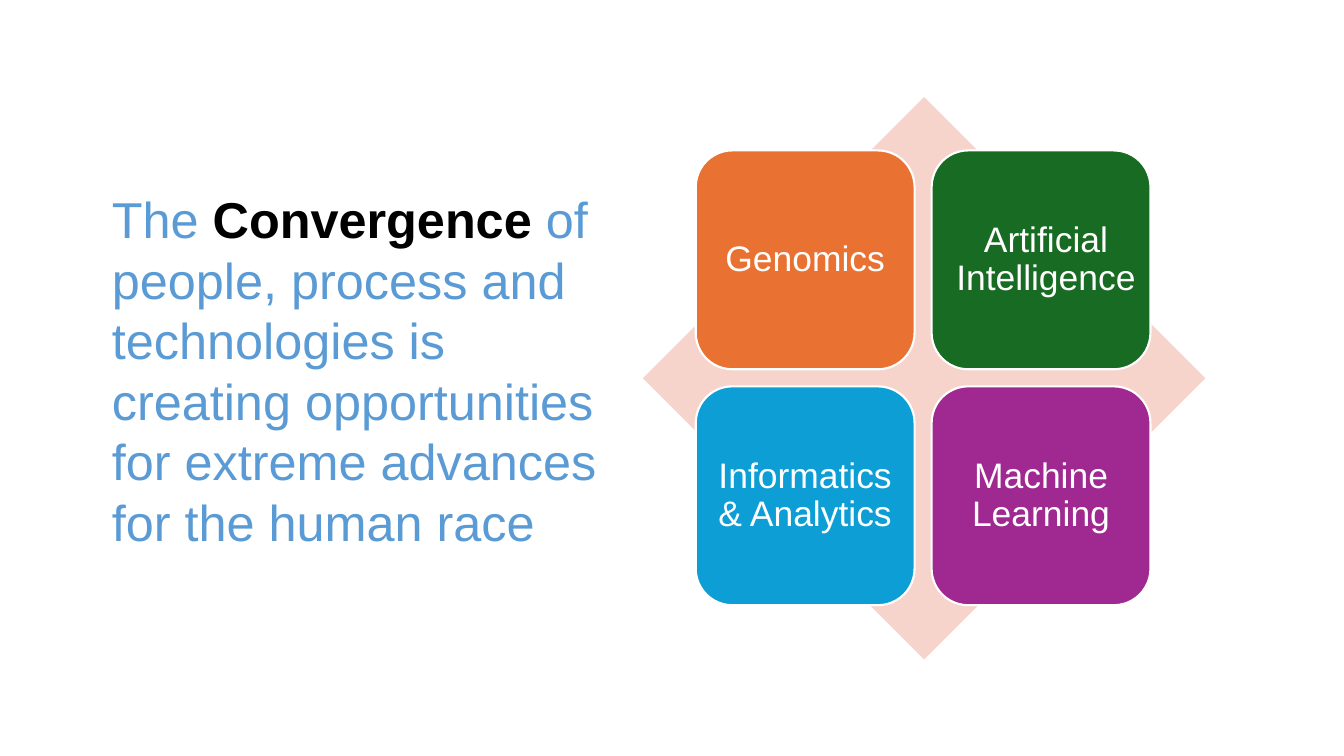
from pptx import Presentation
from pptx.dml.color import RGBColor
from pptx.enum.shapes import MSO_SHAPE
from pptx.enum.text import MSO_ANCHOR, MSO_AUTO_SIZE, PP_ALIGN
from pptx.util import Pt

DIAMOND, ROUNDED = MSO_SHAPE.DIAMOND, MSO_SHAPE.ROUNDED_RECTANGLE
MIDDLE, NO_FIT = MSO_ANCHOR.MIDDLE, MSO_AUTO_SIZE.NONE
LEFT, CENTER = PP_ALIGN.LEFT, PP_ALIGN.CENTER

TITLE = [
    ("The ", "5B9BD5", False),
    ("Convergence", "000000", True),
    (" of people, process and technologies is creating opportunities "
     "for extreme advances for the human race", "5B9BD5", False),
]
TILES = [
    ("Genomics", "E97131", 7.2),
    ("Artificial Intelligence", "176B22", 0),
    ("Informatics & Analytics", "0C9ED5", 7.2),
    ("Machine Learning", "A02891", 7.2),
]
TILE_LEFT, TILE_TOP, TILE_SIZE, TILE_STEP = 497, 107.5, 156.3, 168.5


def rgb(value):
    return RGBColor.from_string(value)


def set_attrs(obj, values):
    for name, value in values.items():
        setattr(obj, name, value)


def format_frame(tf, margin_x, margin_y):
    set_attrs(tf, {
        "auto_size": NO_FIT, "word_wrap": True, "vertical_anchor": MIDDLE,
        "margin_left": Pt(margin_x), "margin_right": Pt(margin_x),
        "margin_top": Pt(margin_y), "margin_bottom": Pt(margin_y),
    })


def add_run(p, text, size, color, bold=False):
    r = p.add_run()
    r.text = text
    set_attrs(r.font, {"name": "Arial", "size": Pt(size), "bold": bold})
    r.font.color.rgb = rgb(color)


def add_shape(s, kind, left, top, size, fill):
    sp = s.shapes.add_shape(kind, Pt(left), Pt(top), Pt(size), Pt(size))
    sp.shadow.inherit = False
    sp.fill.solid()
    sp.fill.fore_color.rgb = rgb(fill)
    sp.line.fill.background()
    return sp


def add_tile(s, left, top, text, fill, margin_right):
    sp = add_shape(s, ROUNDED, left, top, TILE_SIZE, fill)
    sp.adjustments[0] = 0.167
    sp.line.color.rgb = rgb("FFFFFF")
    sp.line.width = Pt(1.5)
    tf = sp.text_frame
    format_frame(tf, 7.2, 7.2)
    tf.margin_right = Pt(margin_right)
    p = tf.paragraphs[0]
    set_attrs(p, {"alignment": CENTER, "line_spacing": 0.9})
    add_run(p, text, 25.3, "FFFFFF")


def format_title(s):
    sp = s.shapes.title
    set_attrs(sp, {"left": Pt(72.7), "top": Pt(129.6),
                   "width": Pt(362.9), "height": Pt(269.3)})
    format_frame(sp.text_frame, 7.2, 3.6)
    p = sp.text_frame.paragraphs[0]
    set_attrs(p, {"alignment": LEFT, "line_spacing": Pt(43.2),
                  "space_before": Pt(0)})
    for text, color, bold in TITLE:
        add_run(p, text, 36, color, bold)


def main():
    prs = Presentation()
    set_attrs(prs, {"slide_width": Pt(960), "slide_height": Pt(540)})
    s = prs.slides.add_slide(prs.slide_layouts[5])
    format_title(s)
    add_shape(s, DIAMOND, 459.2, 69.3, 401.8, "F6D4CC")
    for i, (text, fill, margin_right) in enumerate(TILES):
        row, col = divmod(i, 2)
        add_tile(s, TILE_LEFT + col * TILE_STEP, TILE_TOP + row * TILE_STEP,
                 text, fill, margin_right)
    prs.save("out.pptx")


if __name__ == "__main__":
    main()
